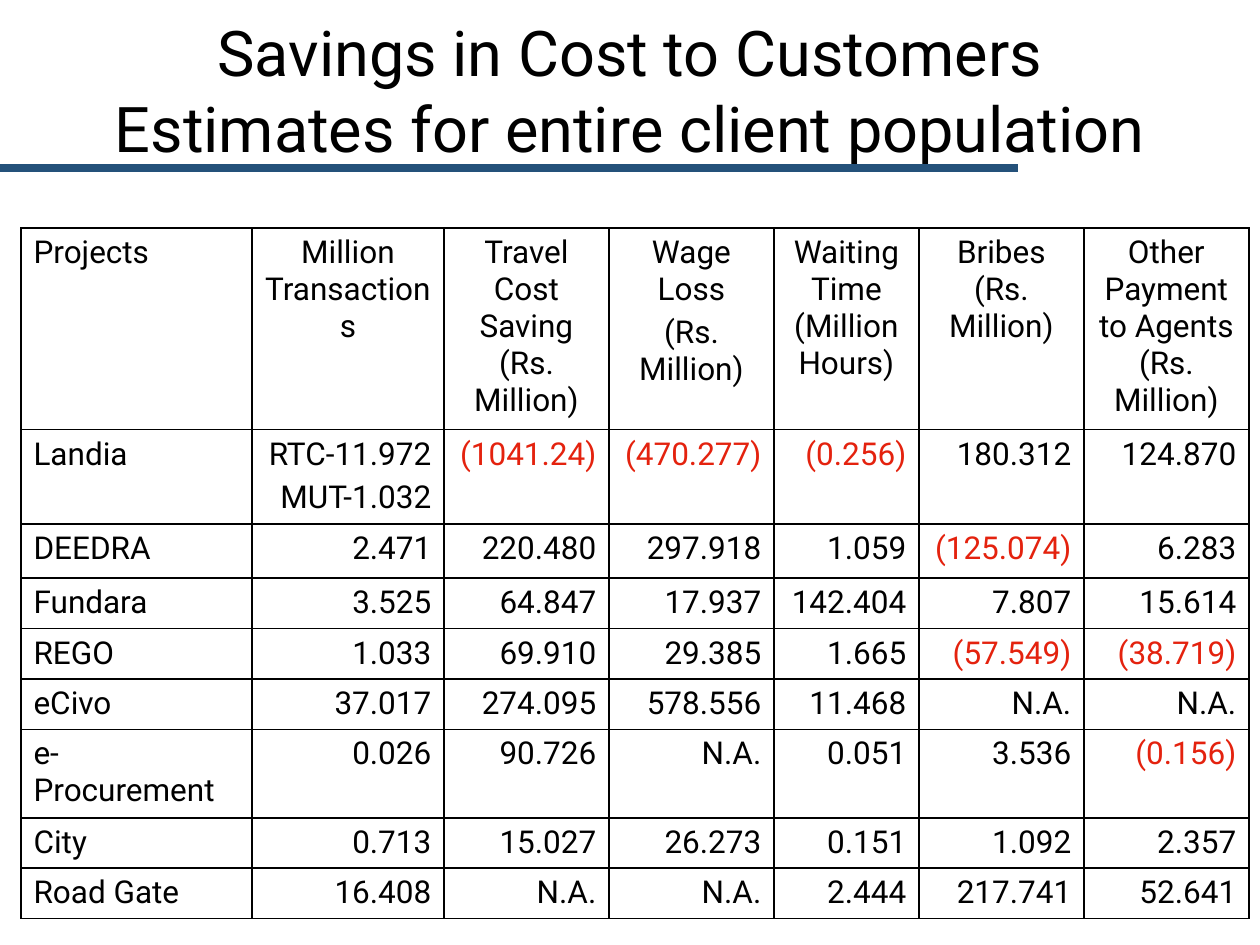
import pptx
import pptx.dml.color
import pptx.enum.shapes
import pptx.enum.text
import pptx.oxml.ns
import pptx.util
from lxml import etree

RGB = pptx.dml.color.RGBColor
ALIGN = pptx.enum.text.PP_ALIGN
BLACK = RGB(0x00, 0x00, 0x00)
RED = RGB(0xE4, 0x22, 0x0E)
BLUE = RGB(0x24, 0x51, 0x7A)
FONT = "Roboto"
SCALE = 914400 // 126

TITLE = "Savings in Cost to Customers\vEstimates for entire client population"
COLS = [231, 192, 165, 165, 145, 165, 165]
ROWS = [111, 93, 54, 50, 50, 35, 38, 44, 49]
HEAD = ["Projects", "Million Transactions", "Travel Cost Saving (Rs. Million)",
        "Wage Loss\n(Rs. Million)", "Waiting Time (Million Hours)",
        "Bribes (Rs. Million)", "Other Payment to Agents (Rs. Million)"]
BODY = [
    ["Landia", "RTC-11.972\nMUT-1.032", "(1041.24)", "(470.277)", "(0.256)", "180.312", "124.870"],
    ["DEEDRA", "2.471", "220.480", "297.918", "1.059", "(125.074)", "6.283"],
    ["Fundara", "3.525", "64.847", "17.937", "142.404", "7.807", "15.614"],
    ["REGO", "1.033", "69.910", "29.385", "1.665", "(57.549)", "(38.719)"],
    ["eCivo", "37.017", "274.095", "578.556", "11.468", "N.A.", "N.A."],
    ["e-Procurement", "0.026", "90.726", "N.A.", "0.051", "3.536", "(0.156)"],
    ["City", "0.713", "15.027", "26.273", "0.151", "1.092", "2.357"],
    ["Road Gate", "16.408", "N.A.", "N.A.", "2.444", "217.741", "52.641"],
]


def px(*nums):
    """Turn pixel lengths into EMU."""
    return [pptx.util.Emu(num * SCALE) for num in nums]


def style(para, size, color, align):
    """Set the font and alignment of a paragraph."""
    para.font.name = FONT
    para.font.size = pptx.util.Pt(size)
    para.font.color.rgb = color
    para.alignment = align


def add_title(slide, text, box):
    """Add the centred heading."""
    frame = slide.shapes.add_textbox(*px(*box)).text_frame
    frame.word_wrap = True
    frame.vertical_anchor = pptx.enum.text.MSO_ANCHOR.MIDDLE
    frame.text = text
    style(frame.paragraphs[0], 36, BLACK, ALIGN.CENTER)


def add_rule(slide, ends):
    """Add the thick line under the heading."""
    kind = pptx.enum.shapes.MSO_CONNECTOR.STRAIGHT
    rule = slide.shapes.add_connector(kind, *px(*ends))
    rule.line.color.rgb = BLUE
    rule.line.width = pptx.util.Pt(4.5)
    etree.SubElement(rule._element.spPr, pptx.oxml.ns.qn("a:effectLst"))


def add_edges(cell):
    """Draw a thin black border on all sides of a cell."""
    qn = pptx.oxml.ns.qn
    props = cell._tc.get_or_add_tcPr()
    for side in "LRTB":
        edge = etree.SubElement(props, qn(f"a:ln{side}"), w="12700")
        fill = etree.SubElement(edge, qn("a:solidFill"))
        etree.SubElement(fill, qn("a:srgbClr"), val=str(BLACK))


def fill_cell(cell, text, color, align):
    """Write and format one table cell."""
    add_edges(cell)
    cell.fill.background()
    cell.text_frame.text = text
    for para in cell.text_frame.paragraphs:
        style(para, 18, color, align)
        para.space_before = pptx.util.Pt(3.6)


def add_grid(slide, left, top, height):
    """Add the table of savings, with losses in red."""
    frame = slide.shapes.add_table(len(ROWS), len(COLS), *px(left, top, sum(COLS), height))
    table = frame.table
    table.first_row = table.horz_banding = False
    for col, width in zip(table.columns, px(*COLS)):
        col.width = width
    for row, depth in zip(table.rows, px(*ROWS)):
        row.height = depth
    frame.height = px(height)[0]
    for i, texts in enumerate([HEAD] + BODY):
        for j, text in enumerate(texts):
            color = RED if text.startswith("(") else BLACK
            align = ALIGN.LEFT if j == 0 else ALIGN.RIGHT if i else ALIGN.CENTER
            fill_cell(table.cell(i, j), text, color, align)


def main():
    """Build and save the slide."""
    deck = pptx.Presentation()
    deck.slide_width, deck.slide_height = px(1260, 945)
    slide = deck.slides.add_slide(deck.slide_layouts[6])
    add_title(slide, TITLE, (63, 10, 1134, 158))
    add_rule(slide, (0, 168, 1018, 168))
    add_grid(slide, 21, 228, 654)
    deck.save("out.pptx")


if __name__ == "__main__":
    main()
